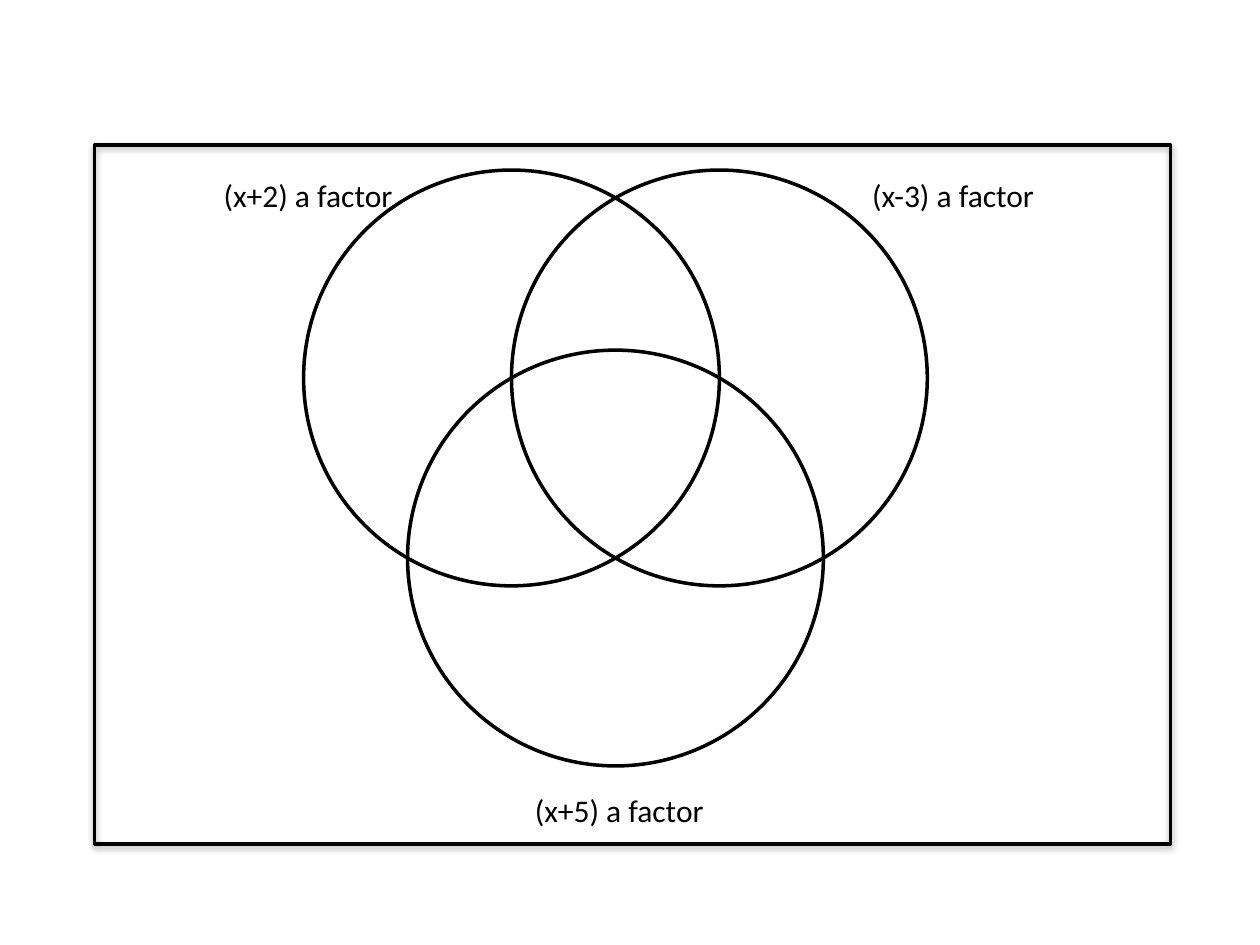
from math import sqrt

from pptx import Presentation
from pptx.dml.color import RGBColor
from pptx.enum.shapes import MSO_SHAPE as Shape
from pptx.enum.text import MSO_AUTO_SIZE as AutoSize, PP_ALIGN as Align
from pptx.util import Inches, Pt

BLACK = RGBColor(0, 0, 0)
LABEL_FONT = {"name": "Calibri", "size": Pt(18)}
LABEL_SIZE = (1.57, 0.4)
LABELS = [
    ("(x+2) a factor", 1.66, 1.35),
    ("(x-3) a factor", 6.78, 1.35),
    ("(x+5) a factor", 4.13, 6.23),
]


def add_outline(shapes, kind, box):
    """Add an unfilled black outline of the given kind in the box."""
    shape = shapes.add_shape(kind, *map(Inches, box))
    shape.fill.background()
    shape.line.color.rgb = BLACK
    shape.line.width = Pt(2)
    return shape


def add_circles(slide, left, top, diameter):
    """Group three circles whose centres form an equilateral triangle."""
    group = slide.shapes.add_group_shape()
    radius = diameter / 2
    offsets = [(0, 0), (radius, 0), (radius / 2, radius * sqrt(3) / 2)]
    for across, down in offsets:
        box = (left + across, top + down, diameter, diameter)
        circle = add_outline(group.shapes, Shape.OVAL, box)
        circle.shadow.inherit = False


def add_label(slide, text, box):
    """Add a centred set label in the box."""
    label = slide.shapes.add_textbox(*map(Inches, box))
    frame = label.text_frame
    frame.word_wrap = True
    frame.auto_size = AutoSize.SHAPE_TO_FIT_TEXT
    paragraph = frame.paragraphs[0]
    paragraph.alignment = Align.CENTER
    run = paragraph.add_run()
    run.text = text
    for name, value in LABEL_FONT.items():
        setattr(run.font, name, value)
    run.font.color.rgb = BLACK


def main():
    """Build the Venn diagram slide and save it."""
    presentation = Presentation()
    presentation.slide_width = Inches(10)
    presentation.slide_height = Inches(7.5)
    slide = presentation.slides.add_slide(presentation.slide_layouts[6])
    add_circles(slide, 2.41, 1.35, 3.3)
    for text, left, top in LABELS:
        add_label(slide, text, (left, top, *LABEL_SIZE))
    add_outline(slide.shapes, Shape.RECTANGLE, (0.75, 1.15, 8.54, 5.55))
    presentation.save("out.pptx")


if __name__ == "__main__":
    main()
